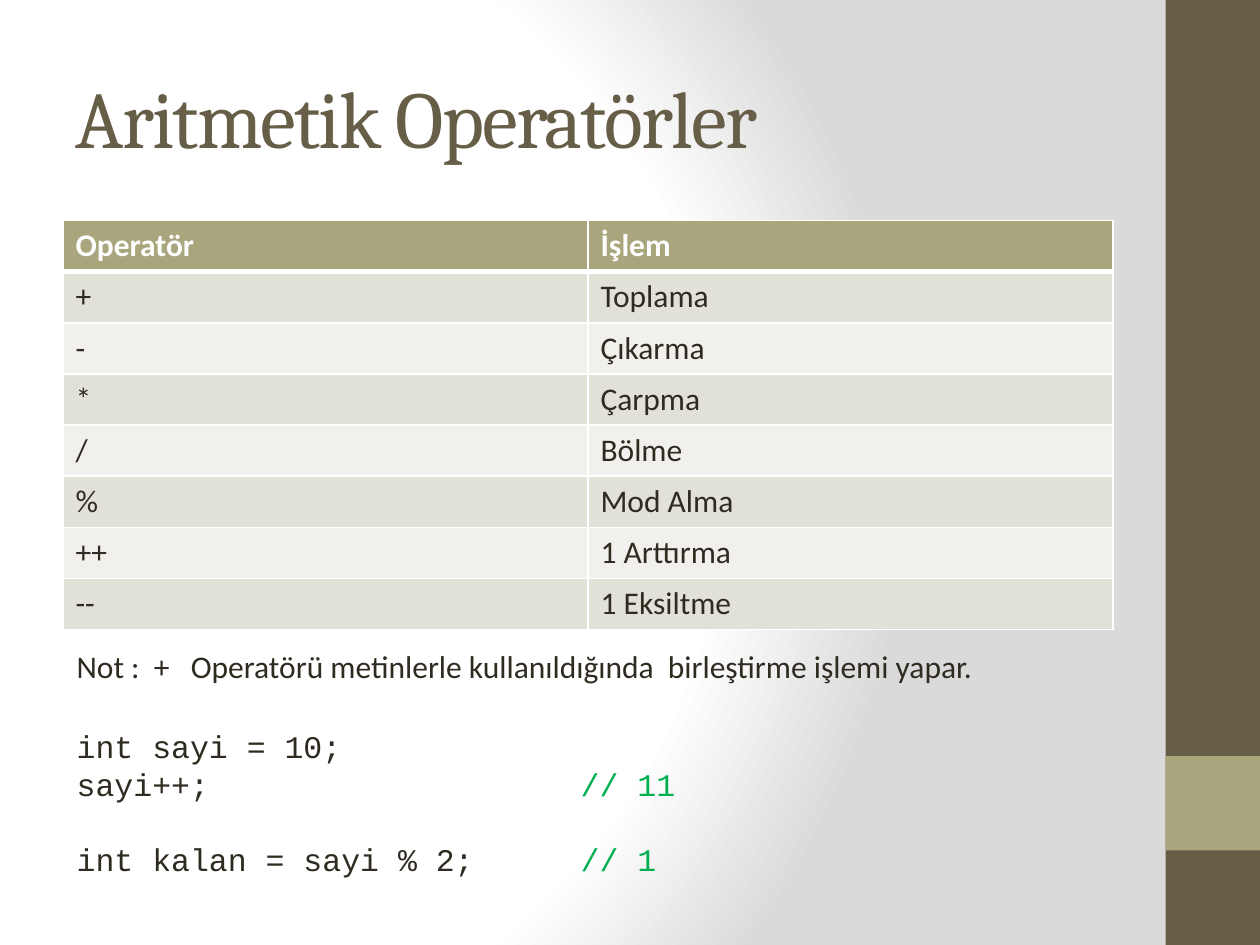
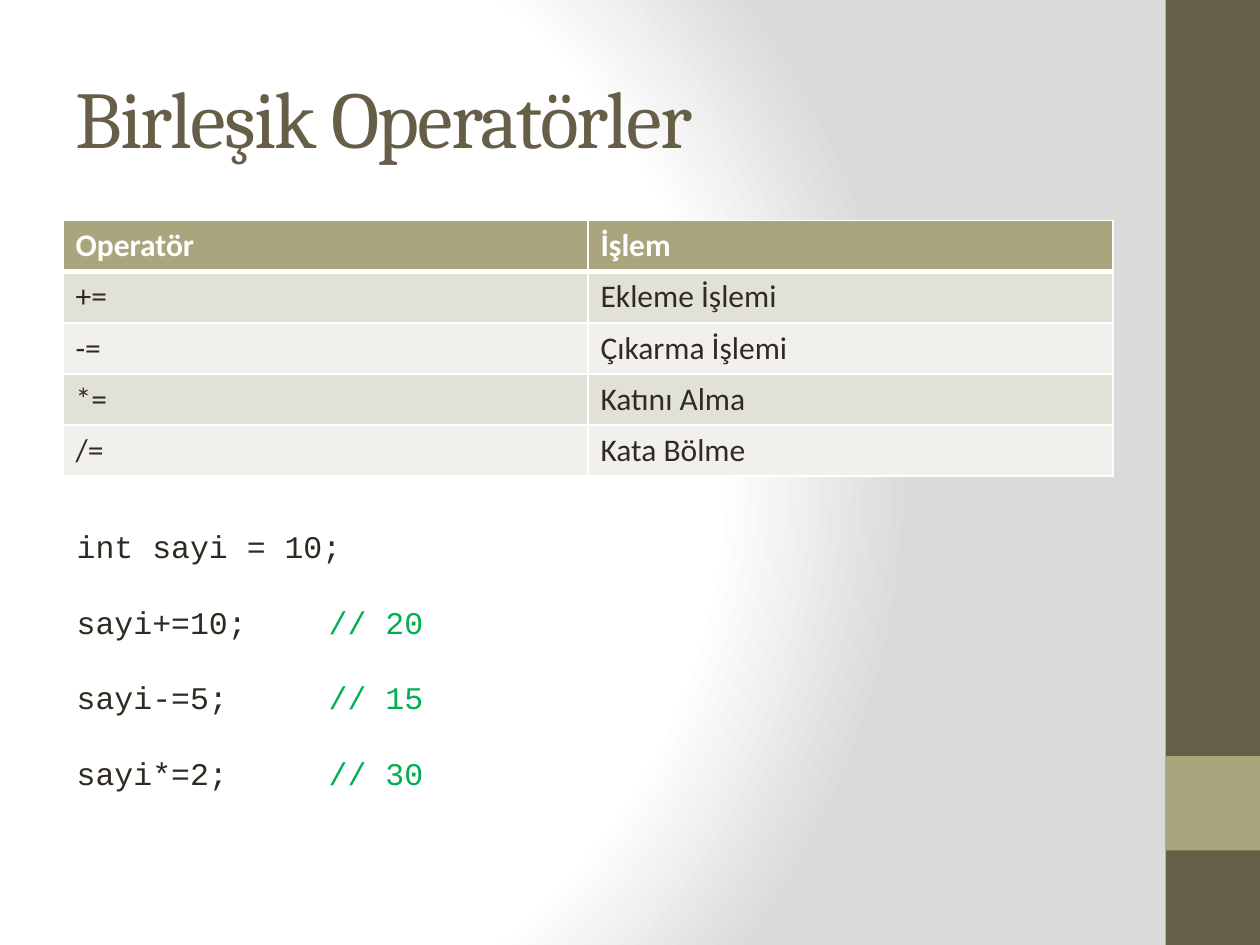
from pptx import Presentation
from pptx import util as u
from pptx.dml.color import RGBColor
from pptx.enum import shapes, text
from pptx.oxml import parse_xml
from pptx.oxml.ns import nsdecls, qn

PX = 9525
BROWN, OLIVE, INK, GREEN, WHITE = "675E47", "A9A57C", "2F2B20", "00B050", "FFFFFF"
STRIPES = ["E2E1D7", "F1F0EC"]
TITLE_FONT, BODY_FONT, CODE_FONT = "Cambria", "Calibri", "Courier New"
LINE_PITCH = u.Pt(21.6)

BACKDROP = f"""<a:gradFill {nsdecls('a')} rotWithShape="1"><a:gsLst>
<a:gs pos="0"><a:srgbClr val="FFFFFF"/></a:gs>
<a:gs pos="75000"><a:srgbClr val="FFFFFF"/></a:gs>
<a:gs pos="100000"><a:srgbClr val="DADADA"/></a:gs></a:gsLst>
<a:path path="circle"><a:fillToRect l="20000" t="50000" r="100000" b="50000"/></a:path>
</a:gradFill>"""


def rgb(value):
    """Turn a hex string into a colour."""
    return RGBColor.from_string(value)


def emu(box):
    """Scale a box given in px."""
    return [length * PX for length in box]


def add_run(paragraph, words, font, size, color, bold=False):
    """Append one formatted run to a paragraph."""
    run = paragraph.add_run()
    run.text = words
    run.font.name, run.font.size, run.font.bold = font, u.Pt(size), bold
    run.font.color.rgb = rgb(color)
    return run


def dress_layout(layout, slide):
    """Give the layout its backdrop and side bands, drawn by way of a slide."""
    layout.background.fill.solid()
    properties = layout.element.find(".//" + qn("p:bgPr"))
    properties.replace(properties[0], parse_xml(BACKDROP))
    for box, color in [((888, 0, 72, 720), BROWN), ((888, 576, 72, 72), OLIVE)]:
        band = slide.shapes.add_shape(shapes.MSO_SHAPE.RECTANGLE, *emu(box))
        band.shadow.inherit = False
        band.fill.solid()
        band.fill.fore_color.rgb = rgb(color)
        band.line.fill.background()
        layout.shapes.element.append(band.element)


def place_title(slide, box, words):
    """Move and format the title placeholder."""
    title = slide.shapes.title
    title.left, title.top, title.width, title.height = emu(box)
    frame = title.text_frame
    frame.word_wrap = True
    frame.auto_size = text.MSO_AUTO_SIZE.NONE
    frame.vertical_anchor = text.MSO_ANCHOR.MIDDLE
    heading = frame.paragraphs[0]
    heading.alignment = text.PP_ALIGN.LEFT
    run = add_run(heading, words, TITLE_FONT, 46, BROWN)
    run.font.element.set("spc", "-100") if hasattr(run.font, "element") else \
        run._r.get_or_add_rPr().set("spc", "-100")


def border_cell(cell, top, bottom):
    """Draw white borders, with top and bottom widths in points."""
    properties = cell._tc.get_or_add_tcPr()
    sides = [("lnL", 1), ("lnR", 1), ("lnT", top), ("lnB", bottom)]
    for place, (side, width) in enumerate(sides):
        properties.insert(place, parse_xml(
            f'<a:{side} {nsdecls("a")} w="{u.Pt(width)}"><a:solidFill>'
            f'<a:srgbClr val="{WHITE}"/></a:solidFill></a:{side}>'))


def add_operators(slide, box, operators):
    """Add the table of operators; box is left, top, width and row height."""
    left, top, width, row_height = box
    rows = [("Operatör", "İşlem"), *operators]
    table = slide.shapes.add_table(
        len(rows), 2, *emu((left, top, width, row_height * len(rows)))).table
    for i, row in enumerate(rows):
        header = i == 0
        for j, words in enumerate(row):
            cell = table.cell(i, j)
            cell.fill.solid()
            cell.fill.fore_color.rgb = rgb(OLIVE if header else STRIPES[(i - 1) % 2])
            border_cell(cell, 3 if i == 1 else 1, 3 if header else 1)
            add_run(cell.text_frame.paragraphs[0], words, BODY_FONT, 18,
                    WHITE if header else INK, header)


def add_text_frame(slide, box):
    """Add a wrapping text box and return its frame."""
    frame = slide.shapes.add_textbox(*emu(box)).text_frame
    frame.word_wrap = True
    return frame


def add_note(slide, box, words):
    """Add a line of remark."""
    add_run(add_text_frame(slide, box).paragraphs[0], words, BODY_FONT, 18, INK)


def add_code(slide, box, comment_stop, lines):
    """Add code lines (code, comment, spaced) with comments at a tab stop in px."""
    frame = add_text_frame(slide, box)
    for i, (code, comment, spaced) in enumerate(lines):
        line = frame.paragraphs[0] if i == 0 else frame.add_paragraph()
        line.line_spacing = LINE_PITCH
        line.space_before = LINE_PITCH if spaced else 0
        add_run(line, code, CODE_FONT, 18, INK)
        if comment:
            line._p.get_or_add_pPr().append(parse_xml(
                f'<a:tabLst {nsdecls("a")}><a:tab pos="{comment_stop * PX}" algn="l"/>'
                '</a:tabLst>'))
            add_run(line, "\t" + comment, CODE_FONT, 18, GREEN)


def operator_slide(deck, layout, title, operators):
    """Add a slide with its title and operator table."""
    slide = deck.slides.add_slide(layout)
    place_title(slide, (48, 29, 800, 120), title)
    add_operators(slide, (48, 168, 800, 39), operators)
    return slide


def main():
    """Build and save the deck."""
    deck = Presentation()
    deck.slide_width, deck.slide_height = emu((960, 720))
    layout = deck.slide_layouts[5]

    arithmetic = operator_slide(deck, layout, "Aritmetik Operatörler", [
        ("+", "Toplama"), ("-", "Çıkarma"), ("*", "Çarpma"), ("/", "Bölme"),
        ("%", "Mod Alma"), ("++", "1 Arttırma"), ("--", "1 Eksiltme")])
    dress_layout(layout, arithmetic)
    add_note(arithmetic, (49, 488, 801, 38),
             "Not :  +   Operatörü metinlerle kullanıldığında  birleştirme işlemi yapar.")
    add_code(arithmetic, (49, 549, 801, 126), 384, [
        ("int sayi = 10;", "", False),
        ("sayi++;", "// 11", False),
        ("int kalan = sayi % 2;", "// 1", True)])

    compound = operator_slide(deck, layout, "Birleşik Operatörler", [
        ("+=", "Ekleme İşlemi"), ("-=", "Çıkarma İşlemi"),
        ("*=", "Katını Alma"), ("/=", "Kata Bölme")])
    add_code(compound, (49, 397, 801, 242), 192, [
        ("int sayi = 10;", "", False),
        ("sayi+=10;", "// 20", True),
        ("sayi-=5;", "// 15", True),
        ("sayi*=2;", "// 30", True)])

    deck.save("out.pptx")


if __name__ == "__main__":
    main()
